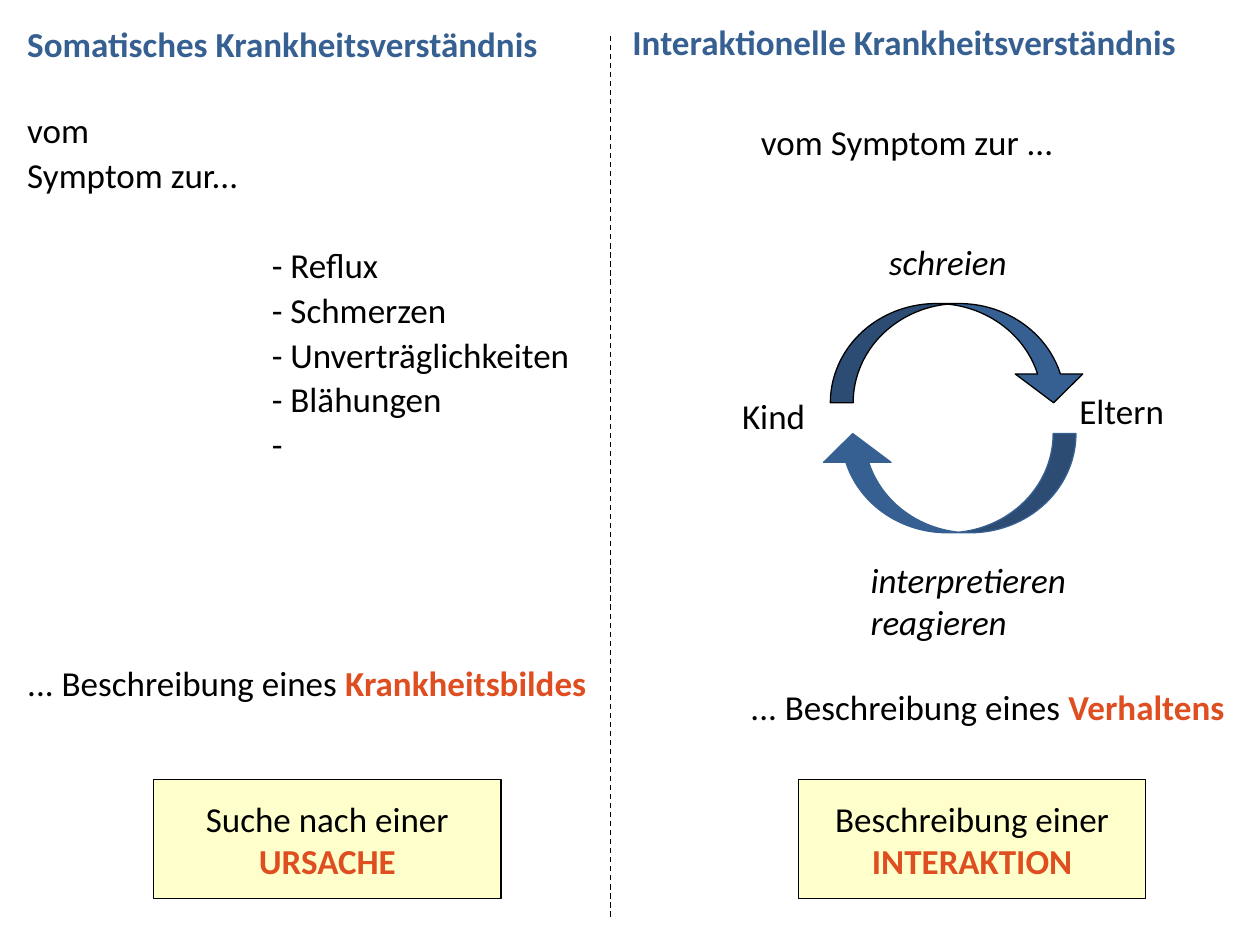
from pptx import Presentation
from pptx.dml.color import RGBColor
from pptx.enum.dml import MSO_LINE
from pptx.enum.shapes import MSO_CONNECTOR, MSO_SHAPE
from pptx.enum.text import MSO_ANCHOR, PP_ALIGN
from pptx.oxml.ns import qn
from pptx.util import Cm, Pt
from lxml.etree import SubElement

BLACK, BLUE, ORANGE, CREAM = "000000", "376092", "DF4E21", "FFFFCC"
PLAIN = {}
ITALIC = {"italic": True}
HEADING = {"bold": True, "color": BLUE}
KEYWORD = {"bold": True, "color": ORANGE}
TIGHT = {"line_spacing": 0.9, "space_before": Pt(4)}
CENTERED = {"alignment": PP_ALIGN.CENTER}


def rgb(value):
    return RGBColor.from_string(value)


def apply(target, values):
    for attribute, value in values.items():
        setattr(target, attribute, value)


class ComparisonSlide:
    font = {"name": "Calibri", "size": Pt(20), "bold": False, "italic": False}

    def __init__(self, deck):
        self.shapes = deck.slides.add_slide(deck.slide_layouts[6]).shapes

    def fill_lines(self, frame, lines, layout):
        for index, line in enumerate(lines):
            paragraph = frame.add_paragraph() if index else frame.paragraphs[0]
            apply(paragraph, layout)
            for words, look in line:
                run = paragraph.add_run()
                run.text = words
                style = {**self.font, **look}
                run.font.color.rgb = rgb(style.pop("color", BLACK))
                apply(run.font, style)

    def text(self, left, top, width, height, lines, layout=PLAIN):
        box = self.shapes.add_textbox(Cm(left), Cm(top), Cm(width), Cm(height))
        box.text_frame.word_wrap = True
        self.fill_lines(box.text_frame, lines, layout)

    def shape(self, kind, left, top, width, height, fill, outline):
        shape = self.shapes.add_shape(kind, Cm(left), Cm(top), Cm(width), Cm(height))
        shape.shadow.inherit = False
        shape.fill.solid()
        shape.fill.fore_color.rgb = rgb(fill)
        shape.line.color.rgb = rgb(outline)
        shape.line.width = Pt(0.75)
        return shape

    def conclusion(self, left, phrase, keyword):
        panel = self.shape(MSO_SHAPE.RECTANGLE, left, 15.72, 7, 2.4, CREAM, BLACK)
        apply(panel.text_frame, {"word_wrap": False, "vertical_anchor": MSO_ANCHOR.MIDDLE})
        self.fill_lines(panel.text_frame, [[(phrase, PLAIN)], [(keyword, KEYWORD)]], CENTERED)

    def cycle_arrow(self, left, top, rotation, outline):
        arrow = self.shape(MSO_SHAPE.CURVED_DOWN_ARROW, left, top, 5.18, 2, BLUE, outline)
        arrow.rotation = rotation
        for index, value in enumerate((0.23, 0.68, 0.29)):
            arrow.adjustments[index] = value

    def divider(self, x, top, bottom):
        line = self.shapes.add_connector(
            MSO_CONNECTOR.STRAIGHT, Cm(x), Cm(top), Cm(x), Cm(bottom))
        line.line.color.rgb = rgb(BLACK)
        apply(line.line, {"width": Pt(0.75), "dash_style": MSO_LINE.DASH})
        SubElement(line._element.spPr, qn("a:effectLst"))


def main():
    deck = Presentation()
    apply(deck, {"slide_width": Cm(25.4), "slide_height": Cm(19.05)})
    slide = ComparisonSlide(deck)
    diagnoses = ["- Reflux", "- Schmerzen", "- Unverträglichkeiten", "- Blähungen", "-"]
    description = ("... Beschreibung eines ", PLAIN)

    slide.text(0.3, 0.43, 12, 1, [[("Somatisches Krankheitsverständnis", HEADING)]], TIGHT)
    slide.text(0.3, 2.16, 5.5, 2, [[("vom", PLAIN)], [("Symptom zur...", PLAIN)]], TIGHT)
    slide.text(5.23, 4.88, 7, 4.7, [[(name, PLAIN)] for name in diagnoses], TIGHT)
    slide.text(0.3, 13.3, 12, 1, [[description, ("Krankheitsbildes", KEYWORD)]], TIGHT)

    slide.cycle_arrow(16.74, 6.12, 0, BLACK)
    slide.cycle_arrow(16.51, 8.74, 180, BLUE)
    slide.text(16.71, 4.72, 4.8, 1.1, [[("schreien", ITALIC)]], CENTERED)
    slide.text(14.71, 7.82, 3, 1.1, [[("Kind", PLAIN)]])
    slide.text(21.51, 7.72, 3.4, 1.1, [[("Eltern", PLAIN)]])
    slide.text(14.88, 13.69, 10.4, 1.1, [[description, ("Verhaltens", KEYWORD)]])
    slide.text(15.09, 2.31, 7.8, 1.1, [[("vom Symptom zur ...", PLAIN)]])

    slide.conclusion(3.1, "Suche nach einer", "URSACHE")
    slide.conclusion(16.1, "Beschreibung einer", "INTERAKTION")
    slide.divider(12.3, 0.72, 18.52)
    slide.text(12.5, 0.38, 12.9, 1, [[("Interaktionelle Krankheitsverständnis", HEADING)]], TIGHT)
    slide.text(17.3, 11.13, 4.8, 1.96, [[("interpretieren reagieren", ITALIC)]])
    deck.save("out.pptx")


if __name__ == "__main__":
    main()
